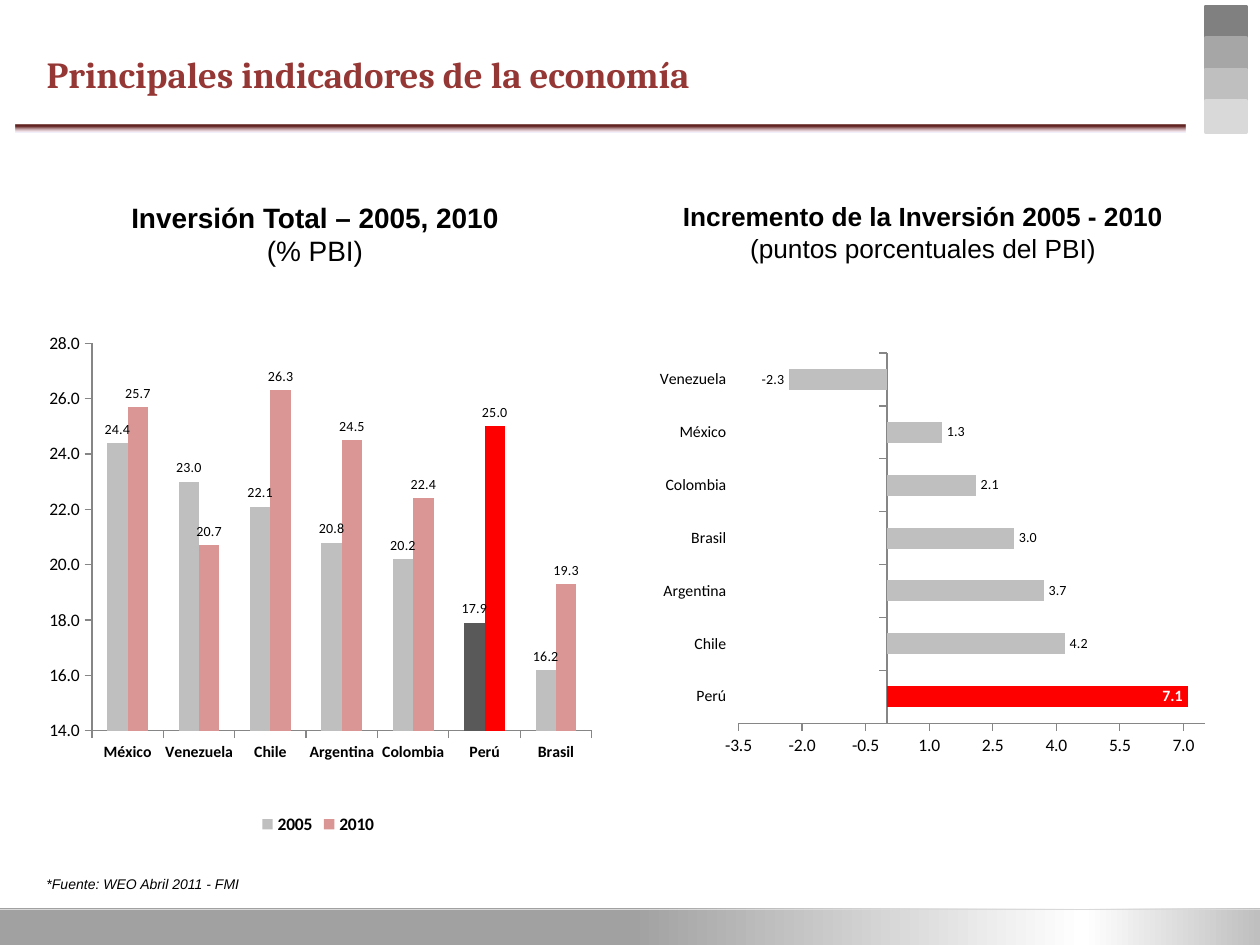
"""Build a slide comparing total investment across Latin American economies."""
import lxml.etree
import pptx
import pptx.chart.data
import pptx.dml.color
import pptx.enum.chart
import pptx.enum.shapes
import pptx.enum.text
import pptx.oxml
import pptx.oxml.ns
import pptx.util

Inches = pptx.util.Inches
Pt = pptx.util.Pt
RGBColor = pptx.dml.color.RGBColor
qn = pptx.oxml.ns.qn
XL = pptx.enum.chart
RECTANGLE = pptx.enum.shapes.MSO_SHAPE.RECTANGLE
ALIGN = pptx.enum.text.PP_ALIGN

BLACK = RGBColor(0x00, 0x00, 0x00)
WHITE = RGBColor(0xFF, 0xFF, 0xFF)
RED = RGBColor(0xFF, 0x00, 0x00)
MAROON = RGBColor(0x95, 0x37, 0x35)
PINK = RGBColor(0xD9, 0x96, 0x94)
SILVER = RGBColor(0xBF, 0xBF, 0xBF)
CHARCOAL = RGBColor(0x59, 0x59, 0x59)
AXIS_GRAY = RGBColor(0x86, 0x86, 0x86)
PALE_GRAY = RGBColor(0xD9, 0xD9, 0xD9)
SQUARE_GRAYS = [RGBColor(0x80, 0x80, 0x80), RGBColor(0xA6, 0xA6, 0xA6), SILVER, PALE_GRAY]

presentation = pptx.Presentation()
presentation.slide_width = Inches(10)
presentation.slide_height = Inches(7.5)
slide = presentation.slides.add_slide(presentation.slide_layouts[5])

gradient_bars = [
    ((0, 7.21, 10, 0.29), 0, [(50, "A1A1A1", 100), (86, "FFFFFF", 100), (100, "BFBFBF", 100)]),
    ((0.12, 0.99, 9.29, 0.06), 90, [(23, "632523", 100), (97, "FFEBFA", 43), (100, "85C2FF", 100)]),
]
for box, angle, stops in gradient_bars:
    bar = slide.shapes.add_shape(RECTANGLE, *map(Inches, box))
    bar.shadow.inherit = False
    bar.line.fill.background()
    bar.fill.gradient()
    gradient = bar._element.spPr.find(qn("a:gradFill"))
    gradient.find(qn("a:lin")).set("ang", str(angle * 60000))
    stop_list = gradient.find(qn("a:gsLst"))
    for old_stop in list(stop_list):
        stop_list.remove(old_stop)
    for position, color, opacity in stops:
        stop = lxml.etree.SubElement(stop_list, qn("a:gs"), pos=str(position * 1000))
        stop_color = lxml.etree.SubElement(stop, qn("a:srgbClr"), val=color)
        if opacity < 100:
            lxml.etree.SubElement(stop_color, qn("a:alpha"), val=str(opacity * 1000))

footer_line = slide.shapes.add_connector(
    pptx.enum.shapes.MSO_CONNECTOR.STRAIGHT, Inches(0), Inches(7.22), Inches(10), Inches(7.22))
footer_line.line.color.rgb = PALE_GRAY
footer_line.line.width = Pt(0.75)
lxml.etree.SubElement(footer_line._element.spPr, qn("a:effectLst"))

for index, gray in enumerate(SQUARE_GRAYS):
    square = slide.shapes.add_shape(
        RECTANGLE, Inches(9.57), Inches(0.05 + index * 0.25), Inches(0.32), Inches(0.25))
    square.shadow.inherit = False
    square.fill.solid()
    square.fill.fore_color.rgb = gray
    square.line.color.rgb = gray
    square.line.width = Pt(2)


def write_text(shape, lines, size, font_name, color, alignment):
    """Fill a shape with (text, bold, italic) lines."""
    frame = shape.text_frame
    frame.word_wrap = True
    frame.auto_size = pptx.enum.text.MSO_AUTO_SIZE.NONE
    frame.vertical_anchor = pptx.enum.text.MSO_ANCHOR.TOP
    for index, (text, bold, italic) in enumerate(lines):
        paragraph = frame.add_paragraph() if index else frame.paragraphs[0]
        paragraph.alignment = alignment
        run = paragraph.add_run()
        run.text = text
        run.font.name = font_name
        run.font.size = Pt(size)
        run.font.bold = bold
        run.font.italic = italic
        run.font.color.rgb = color


title = slide.shapes.title
title.left, title.top, title.width, title.height = map(Inches, (0.27, 0.36, 7.32, 0.63))
write_text(title, [("Principales indicadores de la economía", True, False)],
           21, "Cambria", MAROON, ALIGN.LEFT)

captions = [
    ((0.65, 1.54, 3.7, 0.64), 16, ALIGN.CENTER,
     [("Inversión Total – 2005, 2010", True, False), ("(% PBI)", False, False)]),
    ((5.24, 1.54, 4.17, 0.61), 15, ALIGN.CENTER,
     [("Incremento de la Inversión 2005 - 2010", True, False),
      ("(puntos porcentuales del PBI)", False, False)]),
    ((0.27, 6.9, 4.69, 0.24), 8, ALIGN.LEFT, [("*Fuente: WEO Abril 2011 - FMI", False, True)]),
]
for box, size, alignment, lines in captions:
    caption = slide.shapes.add_textbox(*map(Inches, box))
    write_text(caption, lines, size, "Arial", BLACK, alignment)


def add_bar_chart(chart_type, box, plot_box, categories, series_list, scale):
    """Add a bar chart whose series are (name, values, color, point, point color)."""
    data = pptx.chart.data.CategoryChartData(number_format="0.0")
    data.categories = categories
    for name, values, *_ in series_list:
        data.add_series(name, values)
    chart = slide.shapes.add_chart(chart_type, *map(Inches, box), data).chart
    chart.has_title = False
    chart.has_legend = False
    chart.font.name = "Calibri"
    chart.font.size = Pt(10)
    chart.font.color.rgb = BLACK

    plot = chart.plots[0]
    plot.gap_width = 150
    plot.overlap = 0
    plot.vary_by_categories = False
    for series, (_, _, color, point_index, point_color) in zip(plot.series, series_list):
        series.invert_if_negative = False
        series.format.fill.solid()
        series.format.fill.fore_color.rgb = color
        point_fill = series.points[point_index].format.fill
        point_fill.solid()
        point_fill.fore_color.rgb = point_color
        labels = series.data_labels
        labels.show_value = True
        labels.number_format = "0.0"
        labels.number_format_is_linked = False
        labels.position = XL.XL_LABEL_POSITION.OUTSIDE_END
        labels.font.size = Pt(8)

    value_axis = chart.value_axis
    value_axis.minimum_scale, value_axis.maximum_scale, value_axis.major_unit = scale
    value_axis.has_major_gridlines = False
    value_axis.tick_labels.number_format = "0.0"
    value_axis.tick_labels.number_format_is_linked = False
    chart.category_axis.tick_labels.font.size = Pt(9)
    for axis in (value_axis, chart.category_axis):
        axis.major_tick_mark = XL.XL_TICK_MARK.OUTSIDE
        axis.format.line.color.rgb = AXIS_GRAY

    plot_area = chart._chartSpace.chart.plotArea
    for old_layout in plot_area.findall(qn("c:layout")):
        plot_area.remove(old_layout)
    layout = lxml.etree.Element(qn("c:layout"))
    manual = lxml.etree.SubElement(layout, qn("c:manualLayout"))
    settings = ["inner", "edge", "edge", *plot_box]
    for tag, value in zip(["layoutTarget", "xMode", "yMode", "x", "y", "w", "h"], settings):
        lxml.etree.SubElement(manual, qn("c:" + tag), val=str(value))
    plot_area.insert(0, layout)
    return chart


investment_chart = add_bar_chart(
    XL.XL_CHART_TYPE.COLUMN_CLUSTERED, (0.2, 2.57, 4.65, 4.09), (0.114, 0.038, 0.853, 0.752),
    ["México", "Venezuela", "Chile", "Argentina", "Colombia", "Perú", "Brasil"],
    [("2005", [24.4, 23.0, 22.1, 20.8, 20.2, 17.9, 16.2], SILVER, 5, CHARCOAL),
     ("2010", [25.7, 20.7, 26.3, 24.5, 22.4, 25.0, 19.3], PINK, 5, RED)],
    (14, 28, 2))
investment_chart.category_axis.tick_labels.font.bold = True
investment_chart.has_legend = True
investment_chart.legend.position = XL.XL_LEGEND_POSITION.BOTTOM
investment_chart.legend.include_in_layout = False
investment_chart.legend.font.bold = True

increase_chart = add_bar_chart(
    XL.XL_CHART_TYPE.BAR_CLUSTERED, (4.92, 2.65, 4.88, 3.54), (0.193, 0.043, 0.758, 0.83),
    ["Perú", "Chile", "Argentina", "Brasil", "Colombia", "México", "Venezuela"],
    [("Incremento", [7.1, 4.2, 3.7, 3.0, 2.1, 1.3, -2.3], SILVER, 0, RED)],
    (-3.5, 7.5, 1.5))
increase_chart.category_axis.tick_label_position = XL.XL_TICK_LABEL_POSITION.LOW
peru_label = increase_chart.plots[0].series[0].points[0].data_label
peru_label.font.size = Pt(9)
peru_label.font.bold = True
peru_label.font.color.rgb = WHITE
peru_label.position = XL.XL_LABEL_POSITION.INSIDE_END

presentation.save("out.pptx")
